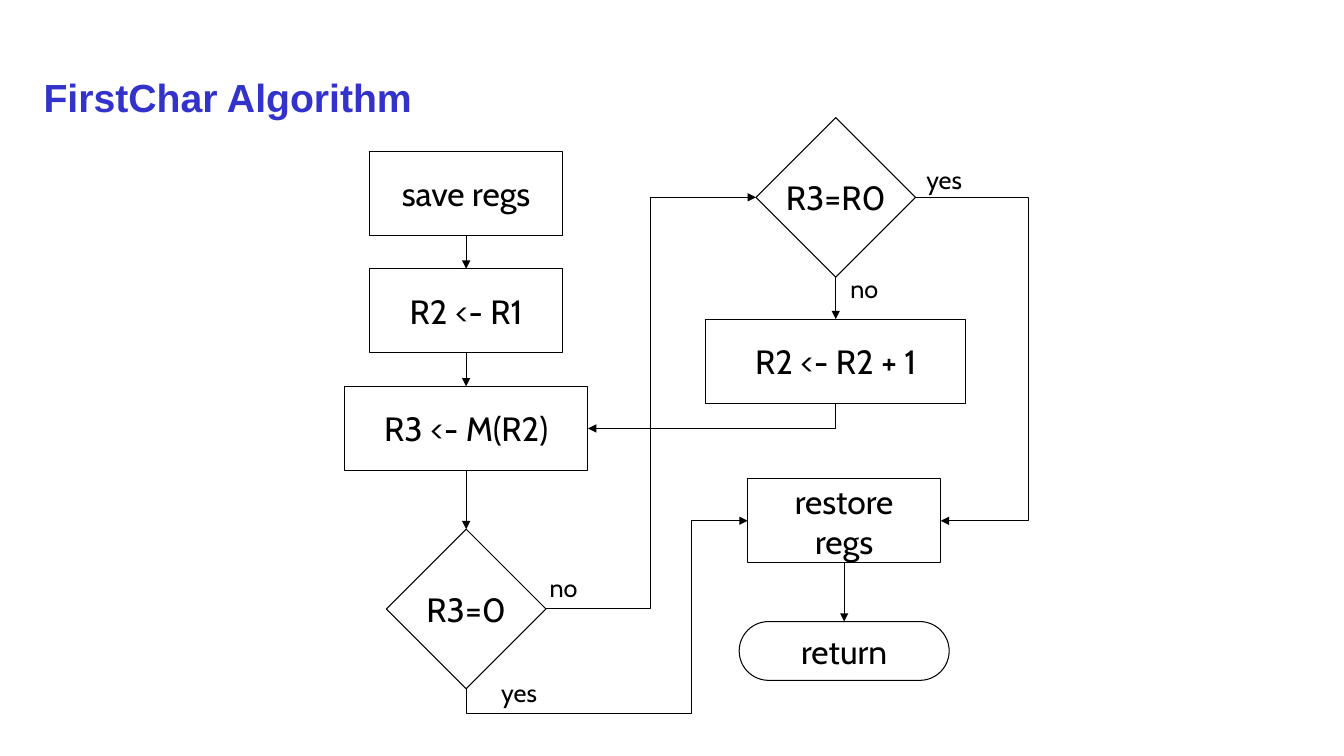
import pptx
import pptx.dml.color
import pptx.enum.shapes
import pptx.enum.text
import pptx.oxml.ns
import pptx.util
from lxml import etree

COLORS = {"title": "3333CC", "ink": "000000"}
SHAPE = pptx.enum.shapes.MSO_SHAPE
CONNECTOR = pptx.enum.shapes.MSO_CONNECTOR
ALIGN = pptx.enum.text.PP_ALIGN
ANCHOR = pptx.enum.text.MSO_ANCHOR
TOP, LEFT, BOTTOM, RIGHT = range(4)
COLUMNS, ROWS = 160, 90
CELL = pptx.util.Inches(1 / 12)


def rgb(name):
    return pptx.dml.color.RGBColor.from_string(COLORS[name])


def child(parent, tag, **attributes):
    return etree.SubElement(parent, pptx.oxml.ns.qn(tag), attributes)


def find(parent, tag):
    return parent.find(pptx.oxml.ns.qn(tag))


class Flowchart:
    """Draws on one slide; all lengths are columns and rows of the grid."""

    font = "Cabin"
    line_width = pptx.util.Pt(0.75)

    def __init__(self, slide):
        self.slide = slide

    def grid(self, *cells):
        return [round(cell * CELL) for cell in cells]

    def set_text(self, frame, text, size, color="ink", font=None, bold=False,
                 align=ALIGN.CENTER, anchor=ANCHOR.MIDDLE, wrap=False):
        frame.text = text
        frame.word_wrap = wrap
        frame.vertical_anchor = anchor
        for paragraph in frame.paragraphs:
            paragraph.alignment = align
            for run in paragraph.runs:
                run.font.name = font or self.font
                run.font.size = pptx.util.Pt(size)
                run.font.bold = bold
                run.font.color.rgb = rgb(color)

    def title(self, text, *place):
        box = self.slide.shapes.add_textbox(*self.grid(*place))
        self.set_text(box.text_frame, text, 28, "title", "Arial", True,
                      ALIGN.LEFT, wrap=True)

    def label(self, text, left, top, width):
        box = self.slide.shapes.add_textbox(*self.grid(left, top, width, 4.8))
        self.set_text(box.text_frame, text, 18, anchor=ANCHOR.TOP)

    def node(self, text, center, top, width, height=10, kind=SHAPE.RECTANGLE):
        node = self.slide.shapes.add_shape(
            kind, *self.grid(center - width / 2, top, width, height))
        node.shadow.inherit = False
        node.fill.background()
        node.line.color.rgb = rgb("ink")
        node.line.width = self.line_width
        self.set_text(node.text_frame, text, 24)
        return node

    def decision(self, text, center, top):
        return self.node(text, center, top, 19, 19, SHAPE.DIAMOND)

    def terminal(self, text, center, top):
        node = self.node(text, center, top, 25, 7, SHAPE.ROUNDED_RECTANGLE)
        node.adjustments[0] = 0.5
        return node

    def arrow(self, source, target, start=BOTTOM, end=TOP, kind=CONNECTOR.STRAIGHT):
        arrow = self.slide.shapes.add_connector(kind, 0, 0, 0, 0)
        arrow.begin_connect(source, start)
        arrow.end_connect(target, end)
        arrow.line.color.rgb = rgb("ink")
        arrow.line.width = self.line_width
        properties = arrow._element.spPr
        child(find(properties, "a:ln"), "a:tailEnd", type="triangle")
        child(properties, "a:effectLst")
        return arrow

    def elbow(self, source, start, target, end, bends, *adjustments):
        """Bent arrow; adjustments are shares of its run along each axis."""
        arrow = self.arrow(source, target, start, end, CONNECTOR.ELBOW)
        geometry = find(arrow._element.spPr, "a:prstGeom")
        geometry.set("prst", f"bentConnector{bends}")
        guides = find(geometry, "a:avLst")
        for number, share in enumerate(adjustments, 1):
            child(guides, "a:gd", name=f"adj{number}",
                  fmla=f"val {round(share * 100000)}")
        if start == BOTTOM:
            self.turn(arrow)

    def turn(self, arrow):
        """Rotate the frame a quarter so that the arrow leaves downwards."""
        run = arrow.end_x - arrow.begin_x
        drop = arrow.end_y - arrow.begin_y
        middle_x = (arrow.begin_x + arrow.end_x) // 2
        middle_y = (arrow.begin_y + arrow.end_y) // 2
        arrow.width, arrow.height = abs(drop), abs(run)
        arrow.left = middle_x - arrow.width // 2
        arrow.top = middle_y - arrow.height // 2
        frame = find(arrow._element.spPr, "a:xfrm")
        frame.set("rot", "5400000")
        frame.set("flipH", str(int(drop < 0)))
        frame.set("flipV", str(int(run > 0)))


def main():
    presentation = pptx.Presentation()
    presentation.slide_width = COLUMNS * CELL
    presentation.slide_height = ROWS * CELL
    chart = Flowchart(presentation.slides.add_slide(presentation.slide_layouts[6]))
    chart.title("FirstChar Algorithm", 4, 8, 152, 7)

    load_column, compare_column, exit_column = 55.5, 99.5, 100.5
    save = chart.node("save regs", load_column, 18, 23)
    copy_pointer = chart.node("R2 <- R1", load_column, 32, 23)
    load = chart.node("R3 <- M(R2)", load_column, 46, 29)
    is_zero = chart.decision("R3=0", load_column, 63)
    is_match = chart.decision("R3=R0", compare_column, 14)
    advance = chart.node("R2 <- R2 + 1", compare_column, 38, 31)
    restore = chart.node("restore\nregs", exit_column, 57, 23)
    finish = chart.terminal("return", exit_column, 74)

    for source, target in ((save, copy_pointer), (copy_pointer, load),
                           (load, is_zero), (is_match, advance),
                           (restore, finish)):
        chart.arrow(source, target)
    chart.elbow(is_zero, RIGHT, is_match, LEFT, 3, 0.5)
    chart.elbow(is_zero, BOTTOM, restore, LEFT, 4, -0.15, 0.8)
    chart.elbow(advance, BOTTOM, load, RIGHT, 2)
    chart.elbow(is_match, RIGHT, restore, RIGHT, 3, 4.47)

    chart.label("no", 64.2, 67.5, 5.8)
    chart.label("no", 100, 32, 5.8)
    chart.label("yes", 58.4, 80, 6.8)
    chart.label("yes", 109, 19, 6.8)
    presentation.save("out.pptx")


if __name__ == "__main__":
    main()
